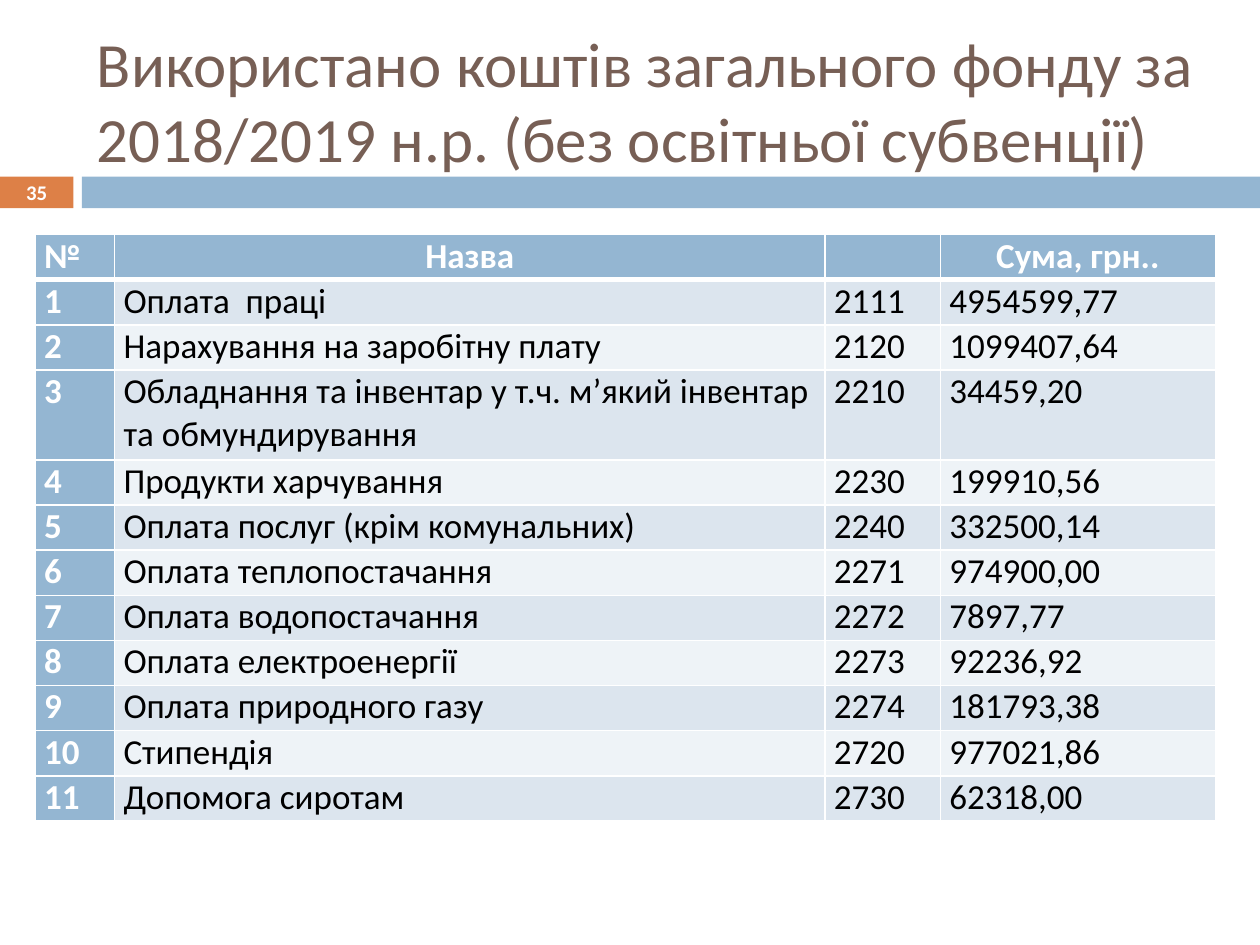
from dataclasses import dataclass

import pptx
import pptx.dml.color
import pptx.enum.shapes
import pptx.enum.text
import pptx.oxml
import pptx.oxml.ns
import pptx.util

Cm = pptx.util.Cm
Pt = pptx.util.Pt
ALIGN = pptx.enum.text.PP_ALIGN
MIDDLE = pptx.enum.text.MSO_ANCHOR.MIDDLE


@dataclass(frozen=True)
class Theme:
    font: str = "Calibri"
    title: str = "775F55"
    blue: str = "94B6D2"
    orange: str = "DD8047"
    odd_row: str = "DCE5EE"
    even_row: str = "EEF3F7"
    white: str = "FFFFFF"
    black: str = "000000"
    title_size: float = 36
    table_size: float = 20
    number_size: float = 11.9


THEME = Theme()
TITLE = "Використано коштів загального фонду за 2018/2019 н.р. (без освітньої субвенції)"
PAGE_NUMBER = "35"
HEADINGS = ("№", "Назва", "", "Сума, грн..")
HEADING_ALIGNS = (ALIGN.JUSTIFY, ALIGN.CENTER, ALIGN.CENTER, ALIGN.CENTER)
EXPENSES = (
    ("Оплата  праці", "2111", "4954599,77"),
    ("Нарахування на заробітну плату", "2120", "1099407,64"),
    ("Обладнання та інвентар у т.ч. м’який інвентар та обмундирування", "2210", "34459,20"),
    ("Продукти харчування", "2230", "199910,56"),
    ("Оплата послуг (крім комунальних)", "2240", "332500,14"),
    ("Оплата теплопостачання", "2271", "974900,00"),
    ("Оплата водопостачання", "2272", "7897,77"),
    ("Оплата електроенергії", "2273", "92236,92"),
    ("Оплата природного газу", "2274", "181793,38"),
    ("Стипендія", "2720", "977021,86"),
    ("Допомога сиротам", "2730", "62318,00"),
)
COLUMN_WIDTHS = (1.6, 14.32, 2.33, 5.54)
ROW_HEIGHT = 0.91
TWO_LINE_HEIGHT = 1.81
TWO_LINE_ROW = 3


def rgb(color):
    return pptx.dml.color.RGBColor.from_string(color)


def write(frame, text, *, size, color, bold=False, align=ALIGN.LEFT):
    paragraph = frame.paragraphs[0]
    paragraph.alignment = align
    paragraph.font.size = Pt(size)
    if not text:
        return
    run = paragraph.add_run()
    run.text = text
    run.font.name = THEME.font
    run.font.size = Pt(size)
    run.font.bold = bold
    run.font.color.rgb = rgb(color)


def add_title(slide):
    title = slide.shapes.title
    title.left, title.top, title.width, title.height = Cm(1.7), Cm(0.64), Cm(22.66), Cm(2.74)
    title.text_frame.word_wrap = True
    title.text_frame.auto_size = pptx.enum.text.MSO_AUTO_SIZE.NONE
    title.text_frame.vertical_anchor = MIDDLE
    write(title.text_frame, TITLE, size=THEME.title_size, color=THEME.title)


def add_bar(slide, left, width, color):
    bar = slide.shapes.add_shape(
        pptx.enum.shapes.MSO_SHAPE.RECTANGLE, Cm(left), Cm(3.56), Cm(width), Cm(0.64))
    bar.shadow.inherit = False
    bar.fill.solid()
    bar.fill.fore_color.rgb = rgb(color)
    bar.line.fill.background()


def add_page_number(slide):
    frame = slide.shapes.add_textbox(Cm(0), Cm(3.53), Cm(1.48), Cm(0.69)).text_frame
    frame.word_wrap = True
    frame.vertical_anchor = MIDDLE
    frame.margin_top = frame.margin_bottom = 0
    write(frame, PAGE_NUMBER, size=THEME.number_size, color=THEME.white,
          bold=True, align=ALIGN.CENTER)


def set_borders(cell, widths):
    """Draw white borders; widths maps an edge letter (L, R, T, B) to points."""
    properties = cell._tc.get_or_add_tcPr()
    for position, (edge, width) in enumerate(widths.items()):
        border = pptx.oxml.parse_xml(
            f'<a:ln{edge} {pptx.oxml.ns.nsdecls("a")} w="{Pt(width)}"><a:solidFill>'
            f'<a:srgbClr val="{THEME.white}"/></a:solidFill></a:ln{edge}>')
        properties.insert(position, border)


def fill_cell(cell, text, fill, *, top=1, bottom=1, **text_format):
    cell.margin_left = cell.margin_right = Cm(0.18)
    cell.margin_top = cell.margin_bottom = 0
    cell.fill.solid()
    cell.fill.fore_color.rgb = rgb(fill)
    set_borders(cell, {"L": 1, "R": 1, "T": top, "B": bottom})
    write(cell.text_frame, text, size=THEME.table_size, **text_format)


def add_expense_table(slide):
    heights = [ROW_HEIGHT] * (len(EXPENSES) + 1)
    heights[TWO_LINE_ROW] = TWO_LINE_HEIGHT
    table = slide.shapes.add_table(
        len(heights), len(COLUMN_WIDTHS), Cm(0.71), Cm(4.73),
        Cm(sum(COLUMN_WIDTHS)), Cm(sum(heights))).table
    for column, width in zip(table.columns, COLUMN_WIDTHS):
        column.width = Cm(width)
    for row, height in zip(table.rows, heights):
        row.height = Cm(height)

    for column, (heading, align) in enumerate(zip(HEADINGS, HEADING_ALIGNS)):
        fill_cell(table.cell(0, column), heading, THEME.blue, bottom=3,
                  color=THEME.white, bold=True, align=align)
    for number, expense in enumerate(EXPENSES, start=1):
        top = 3 if number == 1 else 1
        fill_cell(table.cell(number, 0), str(number), THEME.blue, top=top,
                  color=THEME.white, bold=True)
        band = THEME.odd_row if number % 2 else THEME.even_row
        for column, value in enumerate(expense, start=1):
            fill_cell(table.cell(number, column), value, band, top=top, color=THEME.black)


def main():
    presentation = pptx.Presentation()
    presentation.slide_width, presentation.slide_height = Cm(25.4), Cm(19.05)
    slide = presentation.slides.add_slide(presentation.slide_layouts.get_by_name("Title Only"))
    add_bar(slide, 0, 1.48, THEME.orange)
    add_bar(slide, 1.65, 23.75, THEME.blue)
    add_title(slide)
    add_page_number(slide)
    add_expense_table(slide)
    presentation.save("out.pptx")


if __name__ == "__main__":
    main()
